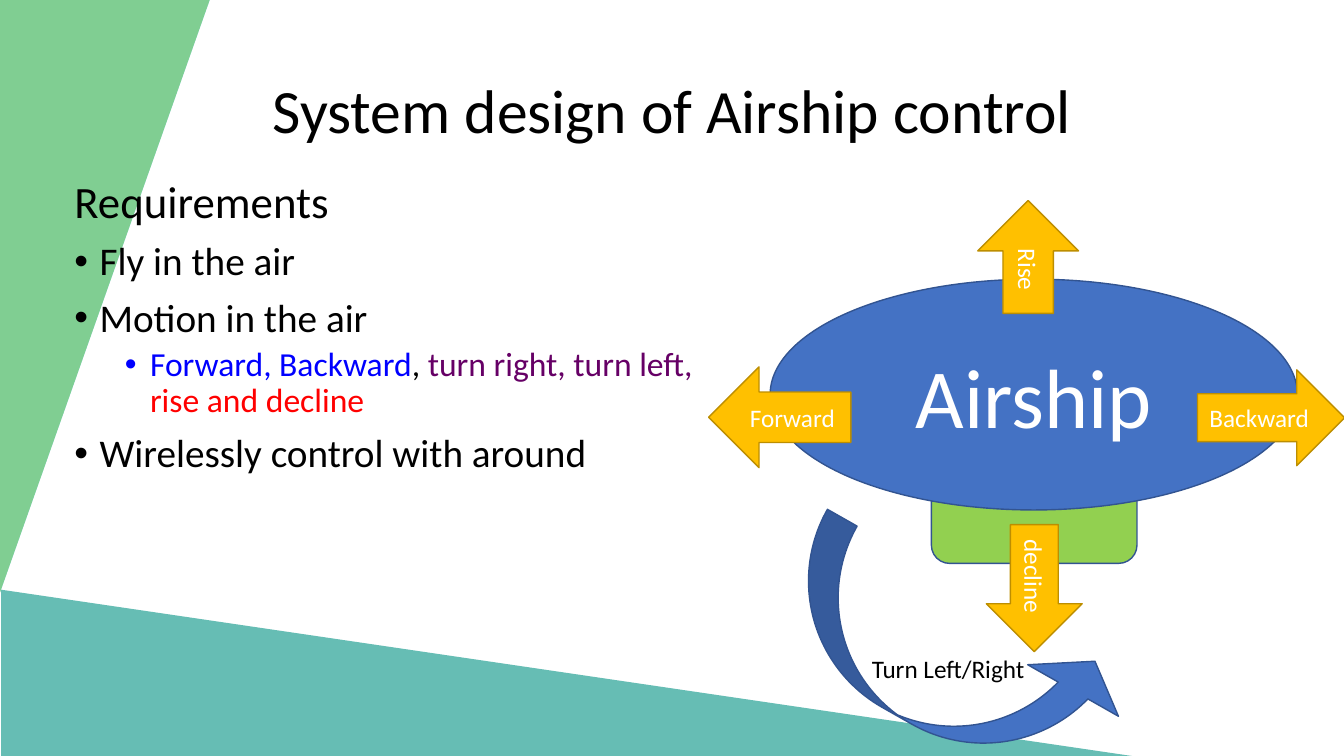
from lxml import etree
from pptx import Presentation
from pptx import util as u
from pptx.dml.color import RGBColor
from pptx.enum import shapes, text
from pptx.oxml.ns import qn

KIND = shapes.MSO_SHAPE
MID = text.MSO_ANCHOR.MIDDLE
CENTER = text.PP_ALIGN.CENTER
BLUE, NAVY, GOLD, BROWN, LIME = "4472C4", "325491", "FFC000", "BD8E00", "92D050"
BLACK, WHITE = "000000", "FFFFFF"


def rgb(code):
    return RGBColor.from_string(code)


class Deck:
    """Holds the style and the slide; places are percent of its size."""
    face = "Calibri"

    def __init__(self):
        self.prs = Presentation()
        self.prs.slide_width = u.Inches(13.33)
        self.prs.slide_height = u.Inches(7.5)
        self.slide = self.prs.slides.add_slide(self.prs.slide_layouts[6])

    def box(self, x, y, w, h):
        wide, high = self.prs.slide_width, self.prs.slide_height
        return [round(part * size / 100)
                for part, size in ((x, wide), (y, high), (w, wide), (h, high))]

    def style(self, para, size, color=None):
        para.font.name = self.face
        para.font.size = u.Pt(size)
        if color:
            para.font.color.rgb = rgb(color)

    def shape(self, kind, place, fill, line=None, turn=0, alpha=None,
              label="", size=18):
        item = self.slide.shapes.add_shape(kind, *self.box(*place))
        item.shadow.inherit = False
        item.rotation = turn
        item.fill.solid()
        item.fill.fore_color.rgb = rgb(fill)
        if alpha:
            tint = item.fill._xPr.find(".//" + qn("a:srgbClr"))
            etree.SubElement(tint, qn("a:alpha"), val=str(alpha * 1000))
        if line:
            item.line.color.rgb = rgb(line)
            item.line.width = u.Pt(1)
        else:
            item.line.fill.background()
        if label:
            frame = item.text_frame
            frame.word_wrap = True
            frame.vertical_anchor = MID
            para = frame.paragraphs[0]
            para.text = label
            para.alignment = CENTER
            self.style(para, size, WHITE)
        return item

    def frame(self, place):
        frame = self.slide.shapes.add_textbox(*self.box(*place)).text_frame
        frame.word_wrap = True
        return frame

    def note(self, place, words, size, align=None, anchor=None, space=None):
        frame = self.frame(place)
        frame.vertical_anchor = anchor
        para = frame.paragraphs[0]
        para.text = words
        para.alignment = align
        para.line_spacing = space
        self.style(para, size, BLACK)

    def bullets(self, place, rows):
        frame = self.frame(place)
        for i, (level, size, gap, indent, runs) in enumerate(rows):
            para = frame.add_paragraph() if i else frame.paragraphs[0]
            para.level = level
            para.line_spacing = 0.9
            para.space_before = u.Pt(gap)
            if indent:
                props = para._p.get_or_add_pPr()
                props.set("marL", str(u.Inches(indent)))
                props.set("indent", str(u.Inches(-0.25)))
                etree.SubElement(props, qn("a:buFont"), typeface="Arial")
                etree.SubElement(props, qn("a:buChar"), char="•")
            self.style(para, size)
            for words, color in runs:
                run = para.add_run()
                run.text = words
                run.font.color.rgb = rgb(color)


def main():
    deck = Deck()

    # Corner triangles
    for tint in ("00ADEF", LIME):
        deck.shape(KIND.RIGHT_TRIANGLE, (-14.25, 25.33, 44.1, 27.73), tint,
                   turn=90, alpha=60)
    deck.shape(KIND.RIGHT_TRIANGLE, (0.08, 78, 84.15, 22), "009183", alpha=60)

    # Title and requirements
    deck.note((6.9, 5.33, 86.25, 19.33), "System design of Airship control",
              44, CENTER, MID, 0.9)
    deck.bullets((4.8, 23.07, 48.38, 63.47), [
        (0, 32, 0, 0, [("Requirements", BLACK)]),
        (0, 28, 10, 0.25, [("Fly in the air", BLACK)]),
        (0, 28, 10, 0.25, [("Motion in the air", BLACK)]),
        (1, 24, 5, 0.75, [("Forward, Backward", "0000FF"), (", ", BLACK),
                          ("turn right, turn left, ", "660066"),
                          ("rise and decline", "FF0000")]),
        (0, 28, 10, 0.25, [("Wirelessly control with around", BLACK)]),
    ])

    # Airship: cabin, then hull
    deck.shape(KIND.ROUNDED_RECTANGLE, (69.3, 60, 15.3, 14.53), LIME, NAVY)
    deck.shape(KIND.OVAL, (57.3, 36.93, 39.23, 30.53), BLUE, NAVY,
               label="Airship", size=60)

    # Motion arrows
    for label, kind, turn, place in (
            ("Rise", KIND.LEFT_ARROW, 90, (72.3, 27.33, 8.4, 13.33)),
            ("decline", KIND.RIGHT_ARROW, 90, (72.23, 71.47, 9.45, 12.67)),
            ("Forward", KIND.LEFT_ARROW, 0, (52.73, 48.53, 10.58, 13.33)),
            ("Backward", KIND.RIGHT_ARROW, 0, (89.1, 48.93, 10.95, 12.67))):
        deck.shape(kind, place, GOLD, BROWN, turn, label=label)

    # Turning arrow and its label
    curve = deck.shape(KIND.CURVED_UP_ARROW, (57.15, 77.87, 26.78, 19.2),
                       BLUE, NAVY, 29.6)
    for i, value in enumerate((0.235, 0.719, 0.25)):
        curve.adjustments[i] = value
    deck.note((64.13, 85.73, 14.48, 5.33), "Turn Left/Right", 18)

    deck.prs.save("out.pptx")


if __name__ == "__main__":
    main()
